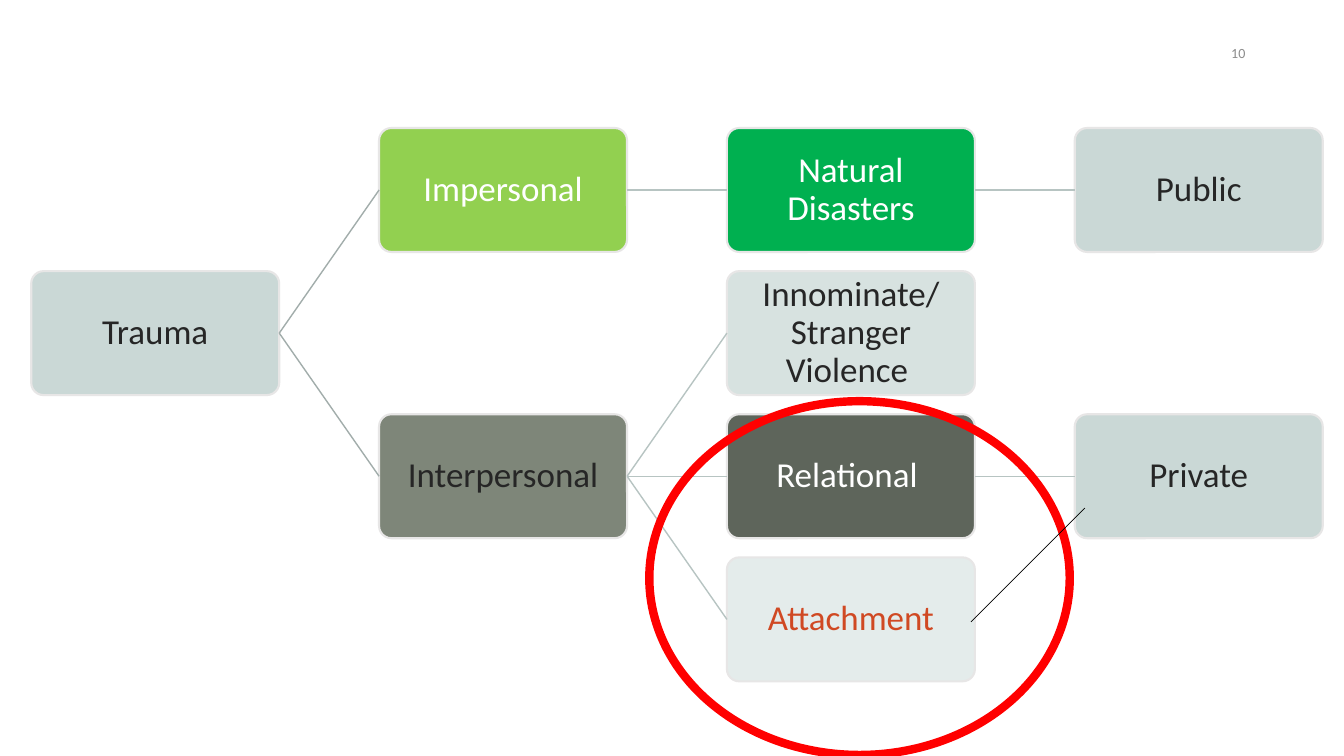
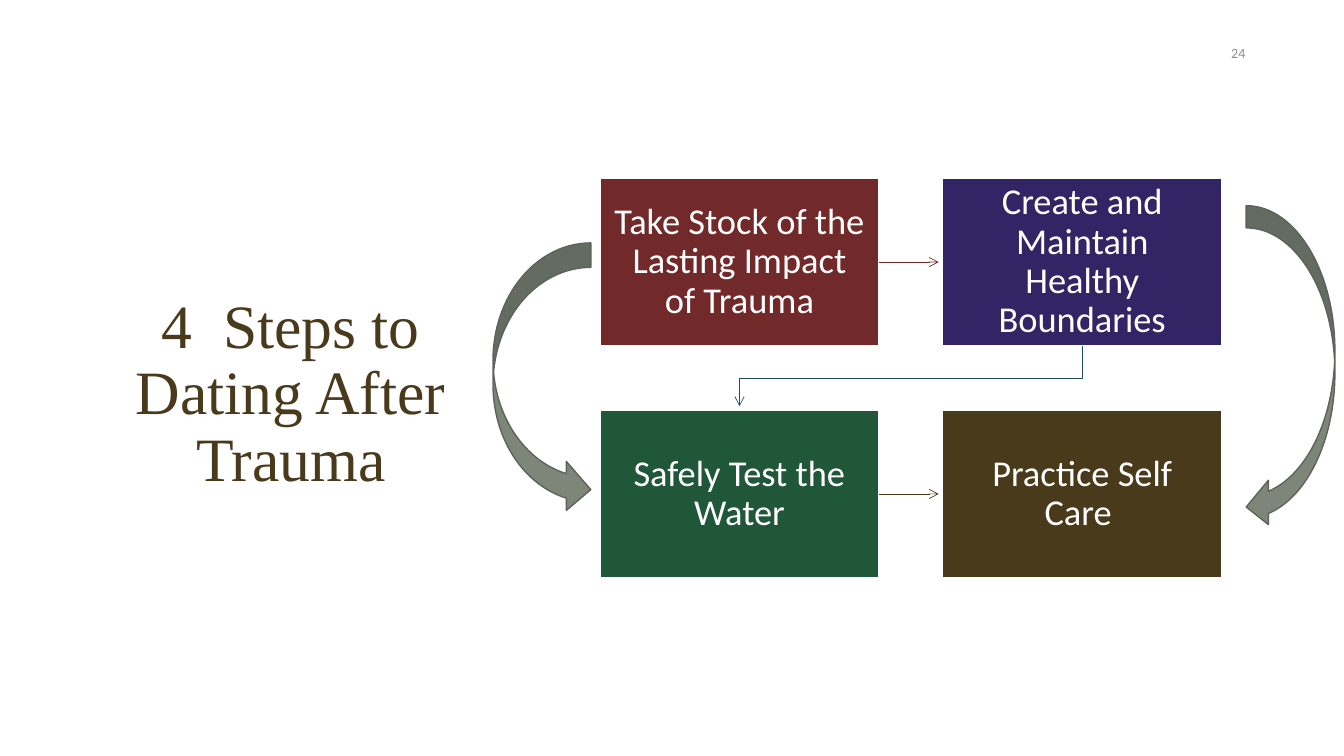
"""Build two slides: a tree of trauma types and a four-step flow."""
from dataclasses import dataclass

from lxml.etree import SubElement
from pptx import Presentation
from pptx.dml.color import RGBColor
from pptx.enum.shapes import MSO_CONNECTOR as Connector, MSO_SHAPE as Preset
from pptx.enum.text import MSO_ANCHOR as Anchor, PP_ALIGN as Align
from pptx.oxml.ns import qn
from pptx.shapes.autoshape import Shape
from pptx.shapes.connector import Connector as Line
from pptx.slide import Slide
from pptx.util import Inches, Pt

WHITE = RGBColor(0xFF, 0xFF, 0xFF)
BLACK = RGBColor(0x00, 0x00, 0x00)
RED = RGBColor(0xFF, 0x00, 0x00)
INK = RGBColor(0x26, 0x26, 0x26)
NUMBER_GRAY = RGBColor(0x8C, 0x8C, 0x8C)
BORDER = RGBColor(0xE7, 0xE6, 0xE6)
MIST = RGBColor(0xCA, 0xD8, 0xD6)
PALE_MIST = RGBColor(0xD7, 0xE2, 0xE0)
FAINT_MIST = RGBColor(0xE4, 0xEC, 0xEB)
SAGE = RGBColor(0x7E, 0x86, 0x79)
SAGE_OUTLINE = RGBColor(0x5D, 0x63, 0x5A)
DARK_SAGE = RGBColor(0x5E, 0x65, 0x5B)
LIME = RGBColor(0x92, 0xD0, 0x50)
GREEN = RGBColor(0x00, 0xB0, 0x50)
ORANGE = RGBColor(0xD0, 0x49, 0x23)
ROOT_BRANCH = RGBColor(0xA2, 0xAD, 0xAB)
BRANCH = RGBColor(0xB7, 0xC4, 0xC2)
MAROON = RGBColor(0x72, 0x29, 0x2A)
INDIGO = RGBColor(0x32, 0x25, 0x65)
FOREST = RGBColor(0x20, 0x57, 0x38)
BROWN = RGBColor(0x4A, 0x3A, 0x1C)
TEAL = RGBColor(0x23, 0x4B, 0x5E)

BODY_FONT, TITLE_FONT = "Calibri", "Times New Roman"
TOP, LEFT, BOTTOM, RIGHT = range(4)


@dataclass(frozen=True)
class Area:
    """A rectangle in inches."""
    left: float
    top: float
    width: float
    height: float

    def lengths(self) -> tuple[int, ...]:
        """Return the rectangle as slide lengths."""
        return tuple(Inches(n) for n in (self.left, self.top, self.width, self.height))


@dataclass(frozen=True)
class Grid:
    """Equal cells set at a regular pitch."""
    first: Area
    column_pitch: float
    row_pitch: float

    def cell(self, column: float, row: float) -> Area:
        """Return the area of one cell."""
        return Area(self.first.left + column * self.column_pitch,
                    self.first.top + row * self.row_pitch,
                    self.first.width, self.first.height)


@dataclass(frozen=True)
class TextStyle:
    """The look of a block of text."""
    size: float
    color: RGBColor
    font: str = BODY_FONT
    align: Align = Align.CENTER
    spacing: float = 0.9
    inset: float | None = None


@dataclass(frozen=True)
class Box:
    """A labelled box in a grid."""
    text: str
    column: int
    row: int
    fill: RGBColor
    ink: RGBColor = INK


TREE_GRID = Grid(Area(0.31, 1.27, 2.46, 1.23), 3.45, 1.42)
TREE = [
    Box("Trauma", 0, 1, MIST),
    Box("Impersonal", 1, 0, LIME, WHITE),
    Box("Natural Disasters", 2, 0, GREEN, WHITE),
    Box("Public", 3, 0, MIST),
    Box("Interpersonal", 1, 2, SAGE),
    Box("Innominate/ Stranger Violence ", 2, 1, PALE_MIST),
    Box("Relational ", 2, 2, DARK_SAGE, WHITE),
    Box("Private", 3, 2, MIST),
    Box("Attachment", 2, 3, FAINT_MIST, ORANGE),
]
TREE_LINKS = [(0, 1), (0, 4), (1, 2), (2, 3), (4, 5), (4, 6), (4, 8), (6, 7)]

STEP_GRID = Grid(Area(5.95, 1.77, 2.77, 1.66), 3.4, 2.3)
STEPS = [
    Box("Take Stock of the Lasting Impact of Trauma", 0, 0, MAROON, WHITE),
    Box("Create and Maintain Healthy Boundaries", 1, 0, INDIGO, WHITE),
    Box("Safely Test the Water", 0, 1, FOREST, WHITE),
    Box("Practice Self Care ", 1, 1, BROWN, WHITE),
]
ARROW_CLEARANCE = 0.04


def write_text(shape: Shape, text: str, style: TextStyle) -> None:
    """Fill a shape with one styled paragraph."""
    frame = shape.text_frame
    frame.word_wrap = True
    frame.vertical_anchor = Anchor.MIDDLE
    if style.inset is not None:
        frame.margin_left = frame.margin_right = Inches(style.inset)
        frame.margin_top = frame.margin_bottom = Inches(style.inset)
    paragraph = frame.paragraphs[0]
    paragraph.alignment = style.align
    paragraph.line_spacing = style.spacing
    run = paragraph.add_run()
    run.text = text
    run.font.name = style.font
    run.font.size = Pt(style.size)
    run.font.color.rgb = style.color


def add_text(slide: Slide, area: Area, text: str, style: TextStyle) -> None:
    """Add a text box."""
    write_text(slide.shapes.add_textbox(*area.lengths()), text, style)


def add_preset(slide: Slide, preset: Preset, area: Area, fill: RGBColor | None,
               line: RGBColor, weight: float) -> Shape:
    """Add a preset shape, hollow when no fill is given."""
    shape = slide.shapes.add_shape(preset, *area.lengths())
    shape.shadow.inherit = False
    if fill is None:
        shape.fill.background()
    else:
        shape.fill.solid()
        shape.fill.fore_color.rgb = fill
    shape.line.color.rgb = line
    shape.line.width = Pt(weight)
    return shape


def add_line(slide: Slide, start: tuple[float, float], end: tuple[float, float],
             color: RGBColor, weight: float) -> Line:
    """Add a straight line without a shadow."""
    points = [Inches(n) for n in (*start, *end)]
    line = slide.shapes.add_connector(Connector.STRAIGHT, *points)
    line.line.color.rgb = color
    line.line.width = Pt(weight)
    SubElement(line.element.spPr, qn("a:effectLst"))
    return line


def add_arrowhead(shape: Shape | Line) -> None:
    """Put an open arrowhead at the end of a line."""
    outline = shape.element.spPr.find(qn("a:ln"))
    SubElement(outline, qn("a:tailEnd"), type="arrow")


def add_page_number(slide: Slide, number: int) -> None:
    """Add the page number at the top right."""
    style = TextStyle(10, NUMBER_GRAY, align=Align.RIGHT, spacing=1.0)
    add_text(slide, Area(11.45, 0.35, 1, 0.35), str(number), style)


def build_tree(slide: Slide) -> None:
    """Draw the tree of trauma types."""
    add_page_number(slide, 10)
    shapes = []
    for box in TREE:
        area = TREE_GRID.cell(box.column, box.row)
        shape = add_preset(slide, Preset.ROUNDED_RECTANGLE, area, box.fill, BORDER, 1.5)
        shape.adjustments[0] = 0.1
        write_text(shape, box.text, TextStyle(25, box.ink, inset=0.06))
        shapes.append(shape)
    for parent, child in TREE_LINKS:
        color = BRANCH if parent else ROOT_BRANCH
        link = add_line(slide, (0, 0), (0, 0), color, 1)
        link.begin_connect(shapes[parent], RIGHT)
        link.end_connect(shapes[child], LEFT)
    add_preset(slide, Preset.OVAL, Area(6.44, 3.98, 4.17, 3.51), None, RED, 6)
    add_line(slide, (10.76, 5.04), (9.63, 6.17), BLACK, 0.5)


def add_row_arrow(slide: Slide, source: Shape, row: int, color: RGBColor) -> None:
    """Point from the first box of a row to the second."""
    start, target = STEP_GRID.cell(0, row), STEP_GRID.cell(1, row)
    middle = start.top + start.height / 2
    arrow = add_line(slide, (start.left + start.width, middle),
                     (target.left - ARROW_CLEARANCE, middle), color, 0.5)
    arrow.begin_connect(source, RIGHT)
    add_arrowhead(arrow)


def add_return_arrow(slide: Slide) -> None:
    """Lead from the end of the first row to the start of the second."""
    source, target = STEP_GRID.cell(1, 0), STEP_GRID.cell(0, 1)
    start_x, end_x = (Inches(area.left + area.width / 2) for area in (source, target))
    start_y = Inches(source.top + source.height)
    turn_y = Inches((source.top + source.height + target.top) / 2)
    end_y = Inches(target.top - ARROW_CLEARANCE)
    builder = slide.shapes.build_freeform(start_x, start_y)
    builder.add_line_segments([(start_x, turn_y), (end_x, turn_y), (end_x, end_y)],
                              close=False)
    arrow = builder.convert_to_shape()
    arrow.shadow.inherit = False
    arrow.fill.background()
    arrow.line.color.rgb = TEAL
    arrow.line.width = Pt(0.5)
    add_arrowhead(arrow)


def build_steps(slide: Slide) -> None:
    """Draw the four steps with their title and arrows."""
    add_text(slide, Area(0.97, 2.57, 3.83, 2.69), "4  Steps to Dating After Trauma",
             TextStyle(44, BROWN, TITLE_FONT))
    add_page_number(slide, 24)
    shapes = []
    for box in STEPS:
        area = STEP_GRID.cell(box.column, box.row)
        shape = add_preset(slide, Preset.RECTANGLE, area, box.fill, WHITE, 1)
        write_text(shape, box.text, TextStyle(26, box.ink, inset=0.14))
        shapes.append(shape)
    add_row_arrow(slide, shapes[0], 0, MAROON)
    add_return_arrow(slide)
    add_row_arrow(slide, shapes[2], 1, BROWN)
    for preset, area in ((Preset.CURVED_LEFT_ARROW, Area(12.36, 2.04, 0.88, 3.21)),
                         (Preset.CURVED_RIGHT_ARROW, Area(4.89, 2.41, 0.97, 2.69))):
        add_preset(slide, preset, area, SAGE, SAGE_OUTLINE, 1)


def main() -> None:
    """Build and save the presentation."""
    presentation = Presentation()
    presentation.slide_width, presentation.slide_height = Inches(13.33), Inches(7.5)
    blank = presentation.slide_layouts[6]
    for build in (build_tree, build_steps):
        build(presentation.slides.add_slide(blank))
    presentation.save("out.pptx")


if __name__ == "__main__":
    main()
